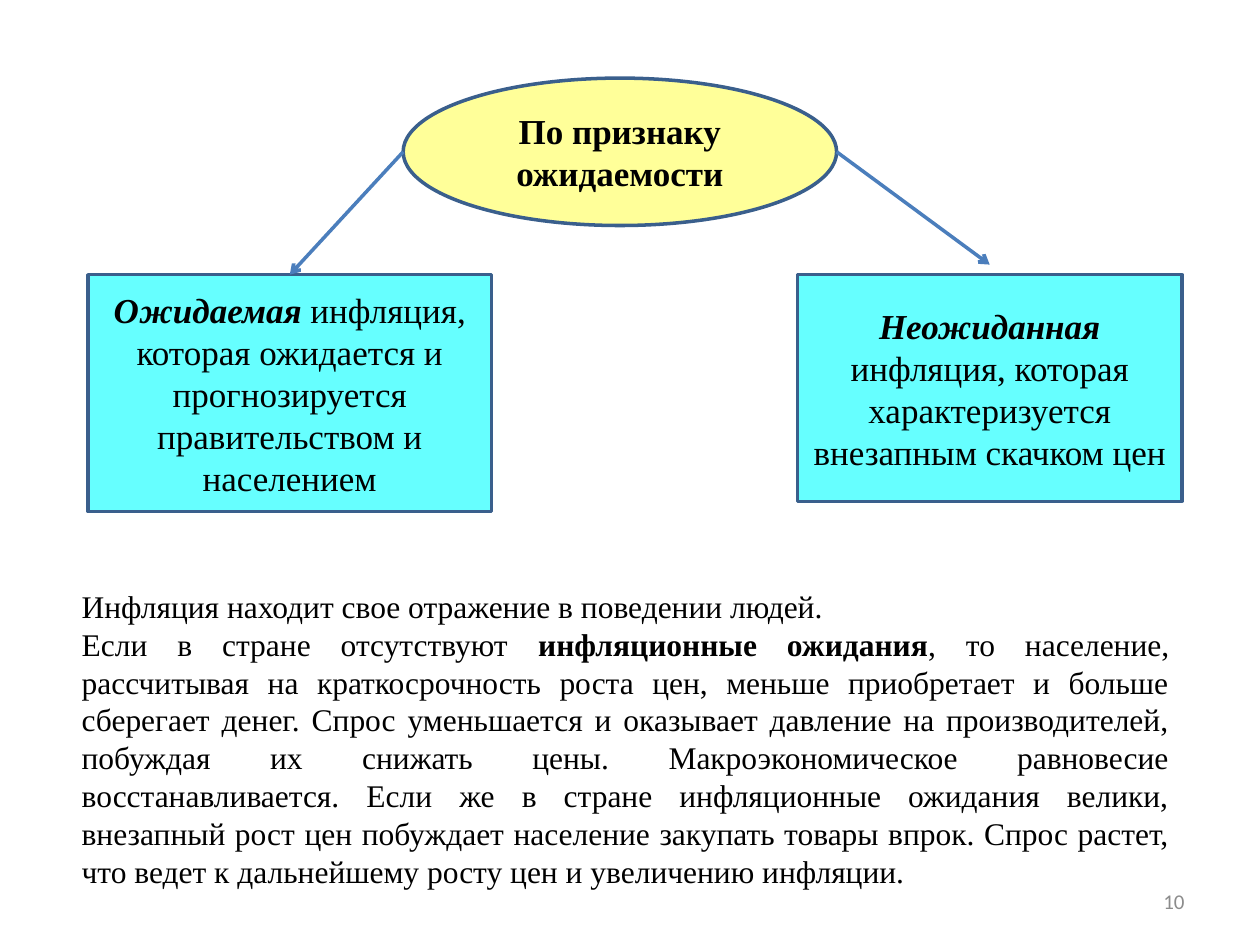
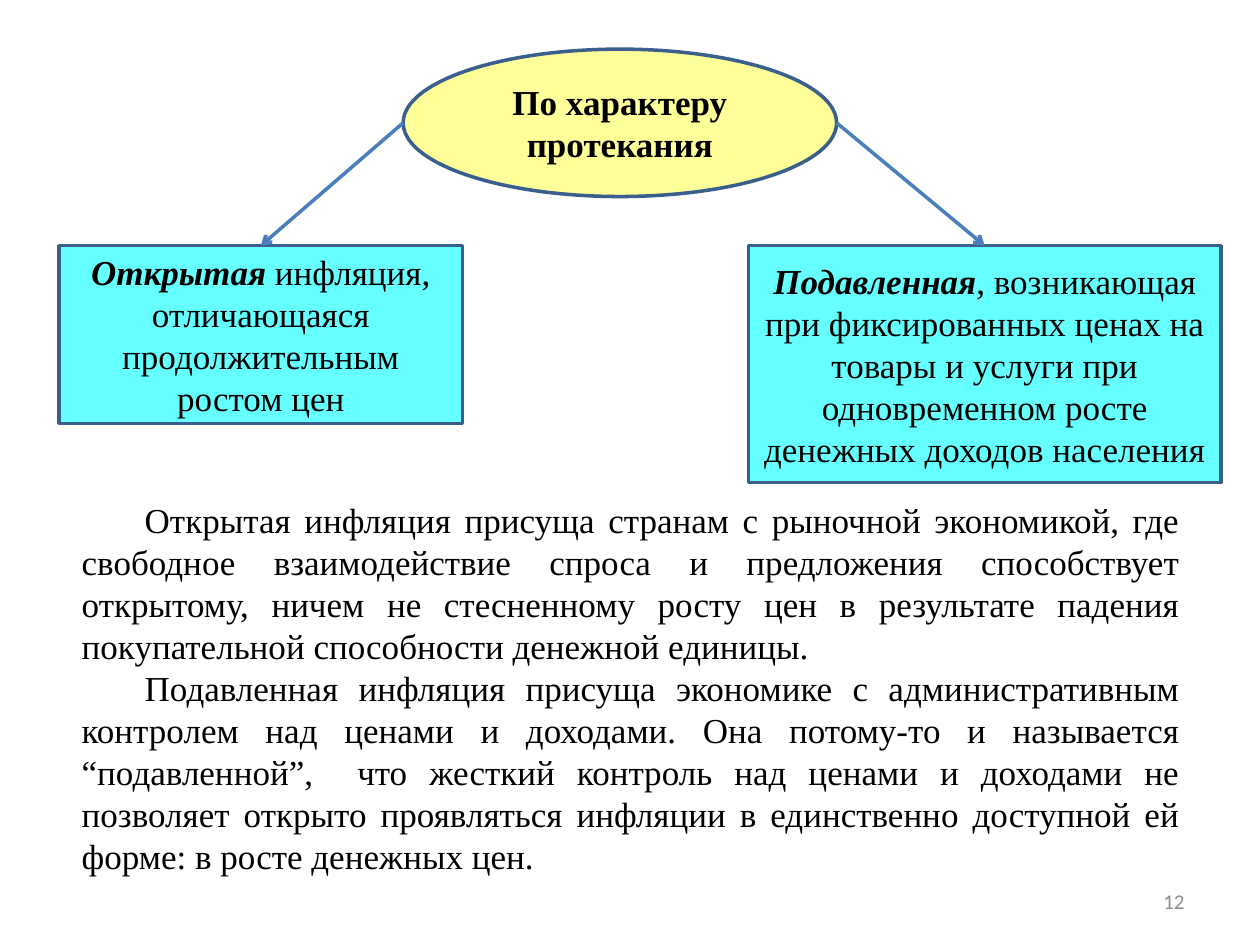
import pptx
import pptx.util
import pptx.dml.color
import pptx.enum.shapes
import pptx.enum.text
import pptx.oxml
import pptx.oxml.ns

Inches = pptx.util.Inches
Pt = pptx.util.Pt
SHAPE = pptx.enum.shapes.MSO_SHAPE
ALIGN = pptx.enum.text.PP_ALIGN
ANCHOR = pptx.enum.text.MSO_ANCHOR

# Content: a run is (text, style), where style holds "b" and/or "i"
SLIDES = [
    {
        "criterion": "По признаку ожидаемости",
        "top": 0.62,
        "kinds": [
            {"box": (0.7, 3.2, 1.88), "gap": 0,
             "runs": [("Ожидаемая", "bi"),
                      (" инфляция, которая ожидается и прогнозируется "
                       "правительством и населением", "")]},
            {"box": (6.33, 3.05, 1.8), "gap": 0.08,
             "runs": [("Неожиданная", "bi"),
                      (" инфляция, которая характеризуется внезапным "
                       "скачком цен", "")]},
        ],
        "body": {
            "at": (0.55, 4.61, 8.83, 2.52), "size": 18, "indent": 0,
            "paragraphs": [
                [("Инфляция находит свое отражение в поведении людей.", "")],
                [("Если в стране отсутствуют ", ""),
                 ("инфляционные ожидания", "b"),
                 (", то население, рассчитывая на краткосрочность роста цен, "
                  "меньше приобретает и больше сберегает денег. Спрос "
                  "уменьшается и оказывает давление на производителей, "
                  "побуждая их снижать цены. Макроэкономическое равновесие "
                  "восстанавливается. Если же в стране инфляционные ожидания "
                  "велики, внезапный рост цен побуждает население закупать "
                  "товары впрок. Спрос растет, что ведет к дальнейшему росту "
                  "цен и увеличению инфляции.", "")],
            ],
        },
        "number": "10",
    },
    {
        "criterion": "По характеру протекания",
        "top": 0.39,
        "kinds": [
            {"box": (0.47, 3.2, 1.41), "gap": 0,
             "runs": [("Открытая", "bi"),
                      (" инфляция, отличающаяся продолжительным ростом цен",
                       "")]},
            {"box": (5.94, 3.75, 1.88), "gap": 0,
             "runs": [("Подавленная", "bi"),
                      (", возникающая при фиксированных ценах на товары и "
                       "услуги при одновременном росте денежных доходов "
                       "населения", "")]},
        ],
        "body": {
            "at": (0.55, 3.91, 8.91, 3.13), "size": 20, "indent": 0.5,
            "paragraphs": [
                [("Открытая инфляция присуща странам с рыночной экономикой, "
                  "где свободное взаимодействие спроса и предложения "
                  "способствует открытому, ничем не стесненному росту цен в "
                  "результате падения покупательной способности денежной "
                  "единицы.", "")],
                [("Подавленная инфляция присуща экономике с административным "
                  "контролем над ценами и доходами. Она потому-то и "
                  "называется “подавленной”,  что жесткий контроль над ценами "
                  "и доходами не позволяет открыто проявляться инфляции в "
                  "единственно доступной ей форме: в росте денежных цен.",
                  "")],
            ],
        },
        "number": "12",
    },
]

# Shared look
SERIF, SANS = "Times New Roman", "Calibri"
BLACK, GREY = "000000", "8C8C8C"
YELLOW, CYAN = "FFFF99", "66FFFF"
OUTLINE, ARROW = "3A5F8C", "4B7EBC"
LINE_WIDTH = 2
OVAL_LEFT, OVAL_W, OVAL_H = 3.2, 3.44, 1.17
BOX_DROP = 1.56  # from the top of the oval to the top of the boxes
NUMBER_AT = (7.17, 6.95, 2.33, 0.4)


def rgb(color):
    return pptx.dml.color.RGBColor.from_string(color)


def style_line(line, color):
    line.color.rgb = rgb(color)
    line.width = Pt(LINE_WIDTH)


def write(tf, paragraphs, size, align, font=SERIF, color=BLACK, indent=0):
    tf.word_wrap = True
    for n, runs in enumerate(paragraphs):
        p = tf.add_paragraph() if n else tf.paragraphs[0]
        p.alignment = align
        if indent:
            p._p.get_or_add_pPr().set("indent", str(Inches(indent)))
        for text, style in runs:
            r = p.add_run()
            r.text = text
            r.font.name = font
            r.font.size = Pt(size)
            r.font.bold = "b" in style
            r.font.italic = "i" in style
            r.font.color.rgb = rgb(color)


def add_node(slide, preset, at, fill, runs):
    sp = slide.shapes.add_shape(preset, *map(Inches, at))
    sp.shadow.inherit = False
    sp.fill.solid()
    sp.fill.fore_color.rgb = rgb(fill)
    style_line(sp.line, OUTLINE)
    sp.text_frame.vertical_anchor = ANCHOR.MIDDLE
    write(sp.text_frame, [runs], 20, ALIGN.CENTER)
    return sp


def add_arrow(slide, start, end, box=None):
    cxn = slide.shapes.add_connector(
        pptx.enum.shapes.MSO_CONNECTOR.STRAIGHT, *map(Inches, start + end))
    style_line(cxn.line, ARROW)
    ln = cxn.line._get_or_add_ln()
    tail = pptx.oxml.parse_xml(
        '<a:tailEnd %s type="arrow"/>' % pptx.oxml.ns.nsdecls("a"))
    ln.append(tail)
    cxn._element.spPr.append(pptx.oxml.parse_xml(
        "<a:effectLst %s/>" % pptx.oxml.ns.nsdecls("a")))
    if box is not None:
        cxn.end_connect(box, 0)


def add_text(slide, at, paragraphs, size, align, **look):
    sp = slide.shapes.add_textbox(*map(Inches, at))
    write(sp.text_frame, paragraphs, size, align, **look)
    return sp


def build_slide(prs, data):
    slide = prs.slides.add_slide(prs.slide_layouts[6])
    top = data["top"]

    # Criterion oval, with a box and an arrow for each kind of inflation
    add_node(slide, SHAPE.OVAL, (OVAL_LEFT, top, OVAL_W, OVAL_H), YELLOW,
             [(data["criterion"], "b")])
    oval_sides = (OVAL_LEFT, OVAL_LEFT + OVAL_W)
    box_top = top + BOX_DROP
    for side_x, kind in zip(oval_sides, data["kinds"]):
        left, width, height = kind["box"]
        box = add_node(slide, SHAPE.RECTANGLE, (left, box_top, width, height),
                       CYAN, kind["runs"])
        add_arrow(slide, (side_x, top + OVAL_H / 2),
                  (left + width / 2, box_top - kind["gap"]),
                  None if kind["gap"] else box)

    # Explanation
    body = data["body"]
    add_text(slide, body["at"], body["paragraphs"], body["size"],
             ALIGN.JUSTIFY, indent=body["indent"])

    # Slide number
    sp = add_text(slide, NUMBER_AT, [[(data["number"], "")]], 12, ALIGN.RIGHT,
                  font=SANS, color=GREY)
    sp.text_frame.vertical_anchor = ANCHOR.MIDDLE


def main():
    prs = pptx.Presentation()
    prs.slide_width, prs.slide_height = Inches(10), Inches(7.5)
    for data in SLIDES:
        build_slide(prs, data)
    prs.save("out.pptx")


if __name__ == "__main__":
    main()
